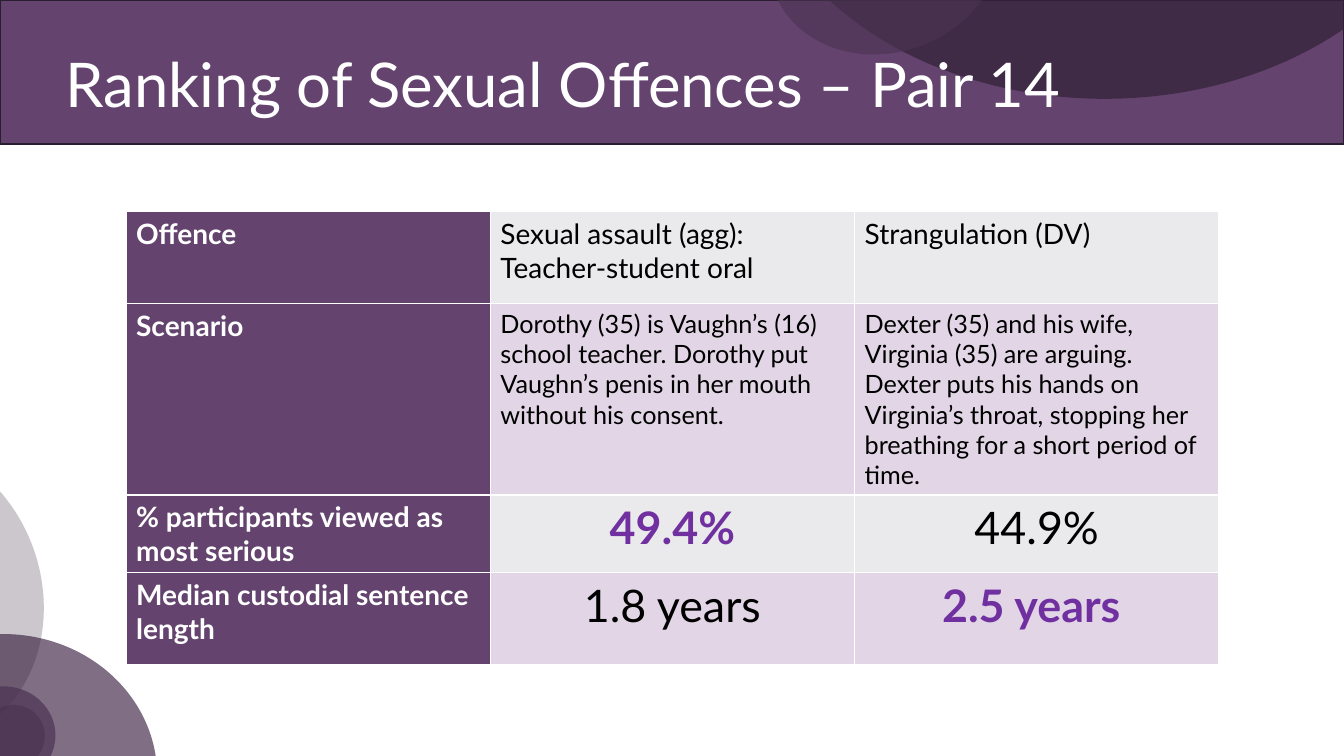
from lxml.etree import SubElement
from pptx import Presentation
from pptx.dml.color import RGBColor
from pptx.enum.shapes import MSO_SHAPE
from pptx.enum.text import MSO_ANCHOR, PP_ALIGN
from pptx.oxml.ns import qn
from pptx.util import Inches, Pt

PLUM, DARK, DEEP = "64446F", "4B3353", "322237"
GREY, LILAC, ACCENT = "EAE9EB", "E2D6E6", "7030A0"
WHITE, BLACK = "FFFFFF", "000000"

# Table rows: heading, two values, value size, favoured column
ROWS = [
    ("Offence", "Sexual assault (agg): Teacher-student oral",
     "Strangulation (DV)", 20, None),
    ("Scenario",
     "Dorothy (35) is Vaughn’s (16) school teacher. Dorothy put Vaughn’s "
     "penis in her mouth without his consent.",
     "Dexter (35) and his wife, Virginia (35) are arguing. Dexter puts his "
     "hands on Virginia’s throat, stopping her breathing for a short period "
     "of time.", 18, None),
    ("% participants viewed as most serious", "49.4%", "44.9%", 32, 1),
    ("Median custodial sentence length", "1.8 years", "2.5 years ", 32, 2),
]
HEIGHTS = [0.91, 0.91, 0.73, 0.91]

# Circles: left, top, width, height, turn, colour, opacity in percent
CIRCLES = [
    (-1.49, 6.29, 3.05, 2.82, 0, DARK, 71),
    (7.46, -4.24, 6.99, 5.22, 180, DEEP, 73),
    (-0.21, 7, 0.66, 0.63, 139.7, DARK, 64),
    (-2.43, 4.57, 3.06, 2.61, 69.6, DEEP, 25),
    (-0.48, 6.81, 1.03, 0.97, 0, DARK, 71),
    (7.61, -1.48, 2.34, 2, 160.5, DARK, 64),
]


def paint(part, color):
    part.solid()
    part.fore_color.rgb = RGBColor.from_string(color)


def write(frame, text, size=20, color=BLACK, bold=False,
          align=PP_ALIGN.LEFT, spacing=None):
    para = frame.paragraphs[0]
    para.alignment = align
    para.line_spacing = spacing
    run = para.add_run()
    run.text = text
    font = run.font
    font.name, font.size, font.bold = "Lato", Pt(size), bold
    paint(font.fill, color)


def add_form(slide, kind, box, color):
    form = slide.shapes.add_shape(kind, *map(Inches, box))
    form.shadow.inherit = False
    paint(form.fill, color)
    form.line.fill.background()
    return form


def add_band(slide, box):
    band = add_form(slide, MSO_SHAPE.RECTANGLE, box, PLUM)
    paint(band.line.fill, "2C1E31")
    band.line.width = Pt(1)


def add_circles(slide):
    for *box, turn, color, alpha in CIRCLES:
        form = add_form(slide, MSO_SHAPE.OVAL, box, color)
        form.rotation = turn
        tint = form.element.spPr.find(qn("a:solidFill"))[0]
        SubElement(tint, qn("a:alpha"), val=str(alpha * 1000))


def add_title(slide, box, text):
    title = slide.shapes.title
    title.left, title.top, title.width, title.height = map(Inches, box)
    frame = title.text_frame
    frame.word_wrap = True
    frame.vertical_anchor = MSO_ANCHOR.MIDDLE
    write(frame, text, size=44, color=WHITE, spacing=0.9)
    # Bring the title in front of the band and circles
    title.element.getparent().append(title.element)


def add_edges(cell):
    props = cell._tc.get_or_add_tcPr()
    for side in ("lnL", "lnR", "lnT", "lnB"):
        edge = SubElement(props, qn(f"a:{side}"), w=str(Pt(1)))
        fill = SubElement(edge, qn("a:solidFill"))
        SubElement(fill, qn("a:srgbClr"), val=WHITE)


def add_grid(slide, box):
    holder = slide.shapes.add_table(len(ROWS), 3, *map(Inches, box))
    table = holder.table
    for col in table.columns:
        col.width = Inches(box[2] / 3)
    for i, (*texts, size, best) in enumerate(ROWS):
        table.rows[i].height = Inches(HEIGHTS[i])
        for j, text in enumerate(texts):
            cell = table.cell(i, j)
            add_edges(cell)
            if j == 0:
                paint(cell.fill, PLUM)
                write(cell.text_frame, text, color=WHITE, bold=True)
                continue
            paint(cell.fill, LILAC if i % 2 else GREY)
            write(cell.text_frame, text, size=size, bold=j == best,
                  color=ACCENT if j == best else BLACK,
                  align=PP_ALIGN.CENTER if size == 32 else PP_ALIGN.LEFT)
    holder.height = Inches(box[3])


def main():
    deck = Presentation()
    deck.slide_width, deck.slide_height = Inches(13.33), Inches(7.5)
    slide = deck.slides.add_slide(deck.slide_layouts[5])
    add_band(slide, (0, 0, 13.33, 1.43))
    add_circles(slide)
    add_title(slide, (0.55, 0.14, 12.23, 1.45),
              "Ranking of Sexual Offences – Pair 14")
    add_grid(slide, (1.25, 2.1, 10.84, 4.18))
    deck.save("out.pptx")


if __name__ == "__main__":
    main()
